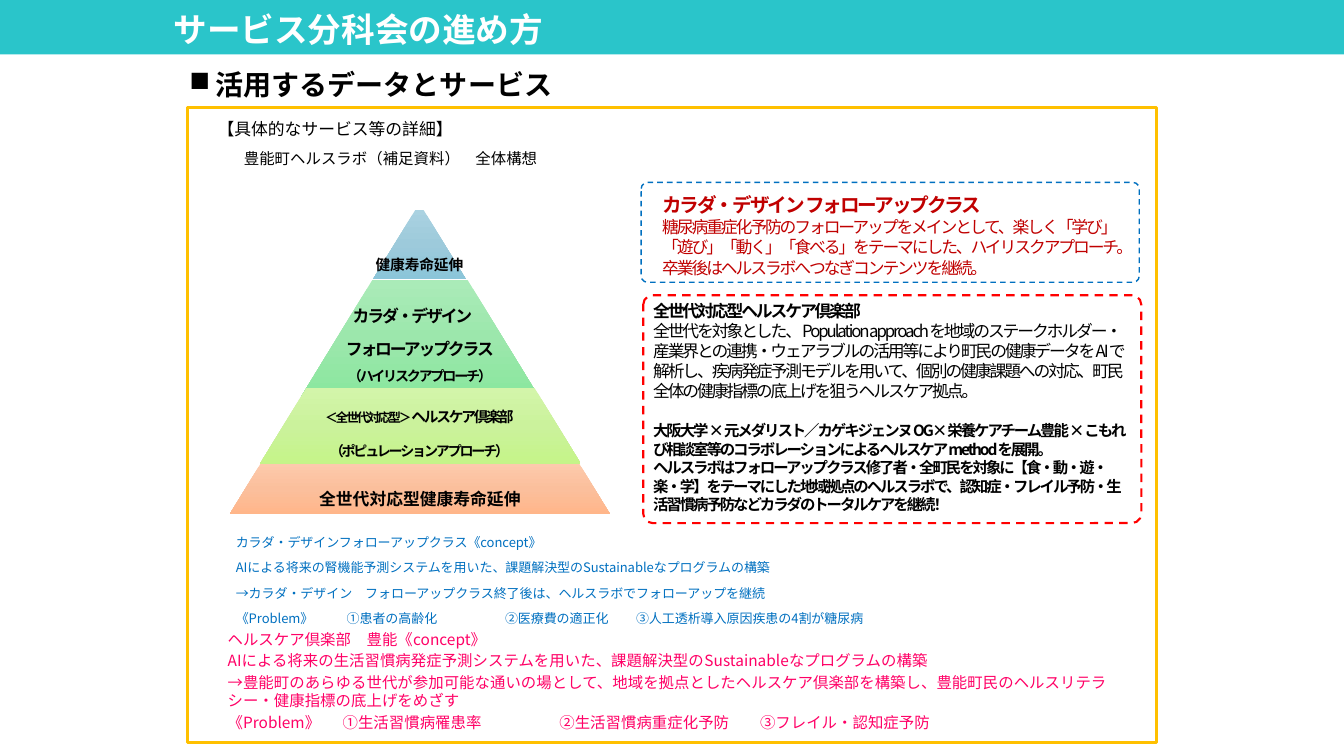
import copy
from dataclasses import dataclass

import pptx
import pptx.dml.color
import pptx.enum.dml
import pptx.enum.shapes
import pptx.enum.text
import pptx.oxml
import pptx.util
from pptx.oxml.ns import qn

Inches = pptx.util.Inches
Pt = pptx.util.Pt
Kind = pptx.enum.shapes.MSO_SHAPE
Align = pptx.enum.text.PP_ALIGN


@dataclass(frozen=True)
class Theme:
    font: str = "Noto Sans CJK JP"
    teal: str = "2AC5CA"
    gold: str = "FFC000"
    black: str = "000000"
    white: str = "FFFFFF"
    red: str = "FF0000"
    wine: str = "C00000"
    blue: str = "0070C0"
    pink: str = "FF0066"
    tiers: tuple = (("AAD2E1", "9DCADB", "8BC5D9"), ("AAEBB8", "9CE7AC", "8AE79E"),
                    ("D3F5AA", "CBF29C", "C5F489"), ("FDCAAC", "FBBF9C", "FFB68A"))
    title: float = 24
    head: float = 20
    lead: float = 14
    body: float = 12
    text: float = 11
    label: float = 10.5
    small: float = 10
    note: float = 9.3
    tiny: float = 9


@dataclass
class Line:
    text: str
    size: float
    bold: bool = False
    track: float = 0
    pitch: float = 0
    gap: float = 0
    tabs: tuple = ()
    mark: str = ""
    indent: float = 0
    tail: str = ""
    last: float = 0


def rgb(code):
    return pptx.dml.color.RGBColor.from_string(code)


class Deck:
    def __init__(self, theme):
        self.theme = theme
        self.file = pptx.Presentation()
        self.file.slide_width = Inches(13.33)
        self.file.slide_height = Inches(7.5)
        self.slide = self.file.slides.add_slide(self.file.slide_layouts[6])

    def shape(self, kind, box, fill=None, line=None, width=1, dash=False, adj=None):
        item = self.slide.shapes.add_shape(kind, *map(Inches, box))
        item.shadow.inherit = False
        if adj is not None:
            item.adjustments[0] = adj
        if fill:
            item.fill.solid()
            item.fill.fore_color.rgb = rgb(fill)
        else:
            item.fill.background()
        if line:
            item.line.color.rgb = rgb(line)
            item.line.width = Pt(width)
            if dash:
                item.line.dash_style = pptx.enum.dml.MSO_LINE.DASH
        else:
            item.line.fill.background()
        return item

    def tier(self, box, shades):
        fill = self.shape(Kind.TRAPEZOID, box, adj=0.61).fill
        fill.gradient()
        fill.gradient_angle = 270
        first = fill.gradient_stops[0]._gs
        first.addnext(copy.deepcopy(first))
        for stop, shade, spot in zip(fill.gradient_stops, shades, (0, 0.5, 1)):
            stop.color.rgb = rgb(shade)
            stop.position = spot

    def style(self, run, size, line, color):
        font = run.font
        font.size = Pt(size)
        font.bold = line.bold
        font.color.rgb = rgb(color)
        font.name = self.theme.font
        props = run._r.get_or_add_rPr()
        props.append(pptx.oxml.parse_xml(
            '<a:ea xmlns:a="http://schemas.openxmlformats.org/drawingml/2006/main" '
            f'typeface="{self.theme.font}"/>'))
        if line.track:
            props.set("spc", str(int(line.track * 100)))

    def text(self, box, lines, color=None, inset=None, middle=False, align=Align.LEFT):
        frame = self.slide.shapes.add_textbox(*map(Inches, box)).text_frame
        frame.word_wrap = True
        if middle:
            frame.vertical_anchor = pptx.enum.text.MSO_ANCHOR.MIDDLE
        if inset is not None:
            frame.margin_left = frame.margin_right = Inches(inset)
            frame.margin_top = frame.margin_bottom = Inches(inset)
        for spot, line in enumerate(lines):
            para = frame.add_paragraph() if spot else frame.paragraphs[0]
            para.text = line.text
            para.alignment = align
            para.line_spacing = Pt(line.pitch or round(line.size * 1.2, 1))
            if line.gap:
                para.space_before = Pt(line.gap)
            props = para._p.get_or_add_pPr()
            if line.mark:
                props.set("marL", str(Inches(line.indent)))
                props.set("indent", str(-Inches(line.indent)))
                props.makeelement(qn("a:buChar"), {})
                bullet = props.makeelement(qn("a:buChar"), {"char": line.mark})
                props.append(bullet)
            if line.tabs:
                stops = props.makeelement(qn("a:tabLst"), {})
                for stop in line.tabs:
                    stops.append(props.makeelement(
                        qn("a:tab"), {"pos": str(Inches(stop)), "algn": "l"}))
                props.append(stops)
            for run in para.runs:
                self.style(run, line.size, line, color or self.theme.black)
            if line.tail:
                run = para.add_run()
                run.text = line.tail
                self.style(run, line.last, line, color or self.theme.black)


def main():
    look = Theme()
    deck = Deck(look)
    deck.shape(Kind.RECTANGLE, (0, 0, 13.33, 0.54), fill=look.teal)
    deck.text((1.78, 0.61, 8.09, 0.44),
              [Line("活用するデータとサービス", look.head, True, pitch=25, mark="■", indent=0.26)])
    deck.text((2.06, 1.13, 3.42, 0.3), [Line("【具体的なサービス等の詳細】", look.body)])
    deck.shape(Kind.RECTANGLE, (1.86, 1.07, 9.61, 6.3), line=look.gold, width=2.25)
    deck.text((2.32, 1.43, 9.15, 0.47),
              [Line("豊能町ヘルスラボ（補足資料）　全体構想", look.text)])

    tiers = [
        ((3.7, 2.08, 0.92, 0.69), (3.6, 2.37, 1.12, 0.4),
         [Line("健康寿命延伸", look.label, True, pitch=20)]),
        ((2.99, 2.78, 2.35, 1.15), (3.4, 2.78, 1.53, 1.15),
         [Line("カラダ・デザイン　", look.body, True, -1.5, 24),
          Line("フォローアップクラス", look.body, True, -1.5, 24),
          Line("（ハイリスクアプローチ）", look.small, True, -1.5, 18)]),
        ((2.58, 3.85, 3.18, 0.75), (3.13, 3.85, 2.06, 0.75),
         [Line("＜全世代対応型＞", look.tiny, True, -1.5, 24,
               tail="ヘルスケア倶楽部", last=look.label),
          Line("（ポピュレーションアプローチ）", look.small, True, -1.5, 24)]),
        ((2.28, 4.6, 3.77, 0.5), (2.94, 4.6, 2.45, 0.5),
         [Line("全世代対応型健康寿命延伸", look.body, True, pitch=28)]),
    ]
    for (box, area, lines), shades in zip(tiers, look.tiers):
        deck.tier(box, shades)
        deck.text(area, lines, inset=0.02, middle=True, align=Align.CENTER)

    deck.shape(Kind.ROUNDED_RECTANGLE, (6.38, 2.93, 4.94, 2.26),
               line=look.red, width=1.5, dash=True, adj=0.041)
    deck.text((6.38, 2.93, 4.94, 2.12), [
        Line("全世代対応型ヘルスケア倶楽部", look.body, True, -1.5),
        Line("全世代を対象とした、Population approachを地域のステークホルダー・産業界との連携・"
             "ウェアラブルの活用等により町民の健康データをAIで解析し、疾病発症予測モデルを用いて、"
             "個別の健康課題への対応、町民全体の健康指標の底上げを狙うヘルスケア拠点。",
             look.body, False, -1.5),
        Line("大阪大学×元メダリスト／カゲキジェンヌOG×栄養ケアチーム豊能×こもれび相談室等の"
             "コラボレーションによるヘルスケアmethodを展開。", look.text, True, -1.5, gap=14.5),
        Line("ヘルスラボはフォローアップクラス修了者・全町民を対象に【食・動・遊・楽・学】を"
             "テーマにした地域拠点のヘルスラボで、認知症・フレイル予防・生活習慣病予防など"
             "カラダのトータルケアを継続！", look.text, True, -1.5),
    ])
    deck.shape(Kind.ROUNDED_RECTANGLE, (6.36, 1.81, 4.94, 0.99),
               line=look.blue, dash=True, adj=0.062)
    deck.text((6.47, 1.86, 4.9, 1.18), [
        Line("カラダ・デザイン フォローアップクラス", look.lead, True, -1.5, 17.5),
        Line("糖尿病重症化予防のフォローアップをメインとして、楽しく「学び」「遊び」「動く」"
             "「食べる」をテーマにした、ハイリスクアプローチ。", look.body, False, -1.5),
        Line("卒業後はヘルスラボへつなぎコンテンツを継続。", look.body, False, -1.5),
    ], look.wine)

    plans = [
        ((2.24, 5.3, 8.89, 0.97), look.blue, look.note, 8, 10, (1.1, 2.67, 3.97), [
            "カラダ・デザインフォローアップクラス《concept》",
            "AIによる将来の腎機能予測システムを用いた、課題解決型のSustainableなプログラムの構築",
            "→カラダ・デザイン　フォローアップクラス終了後は、ヘルスラボでフォローアップを継続",
            "《Problem》\t①患者の高齢化\t②医療費の適正化\t③人工透析導入原因疾患の4割が糖尿病"]),
        ((2.16, 6.2, 9.26, 1.18), look.pink, look.text, 13, 2.4, (1.14, 3.29, 5.28), [
            "ヘルスケア倶楽部　豊能《concept》",
            "AIによる将来の生活習慣病発症予測システムを用いた、課題解決型のSustainableなプログラムの構築",
            "→豊能町のあらゆる世代が参加可能な通いの場として、地域を拠点としたヘルスケア倶楽部を構築し、"
            "豊能町民のヘルスリテラシー・健康指標の底上げをめざす",
            "《Problem》\t①生活習慣病罹患率\t②生活習慣病重症化予防\t③フレイル・認知症予防"]),
    ]
    for box, color, size, pitch, gap, tabs, words in plans:
        deck.text(box, [Line(word, size, pitch=pitch, gap=gap if spot else 0,
                             tabs=tabs if "\t" in word else ())
                        for spot, word in enumerate(words)], color)

    deck.text((1.72, 0.07, 11.08, 0.47),
              [Line("サービス分科会の進め方", look.title, True, pitch=27)],
              look.white, inset=0, middle=True)
    deck.file.save("out.pptx")


if __name__ == "__main__":
    main()
